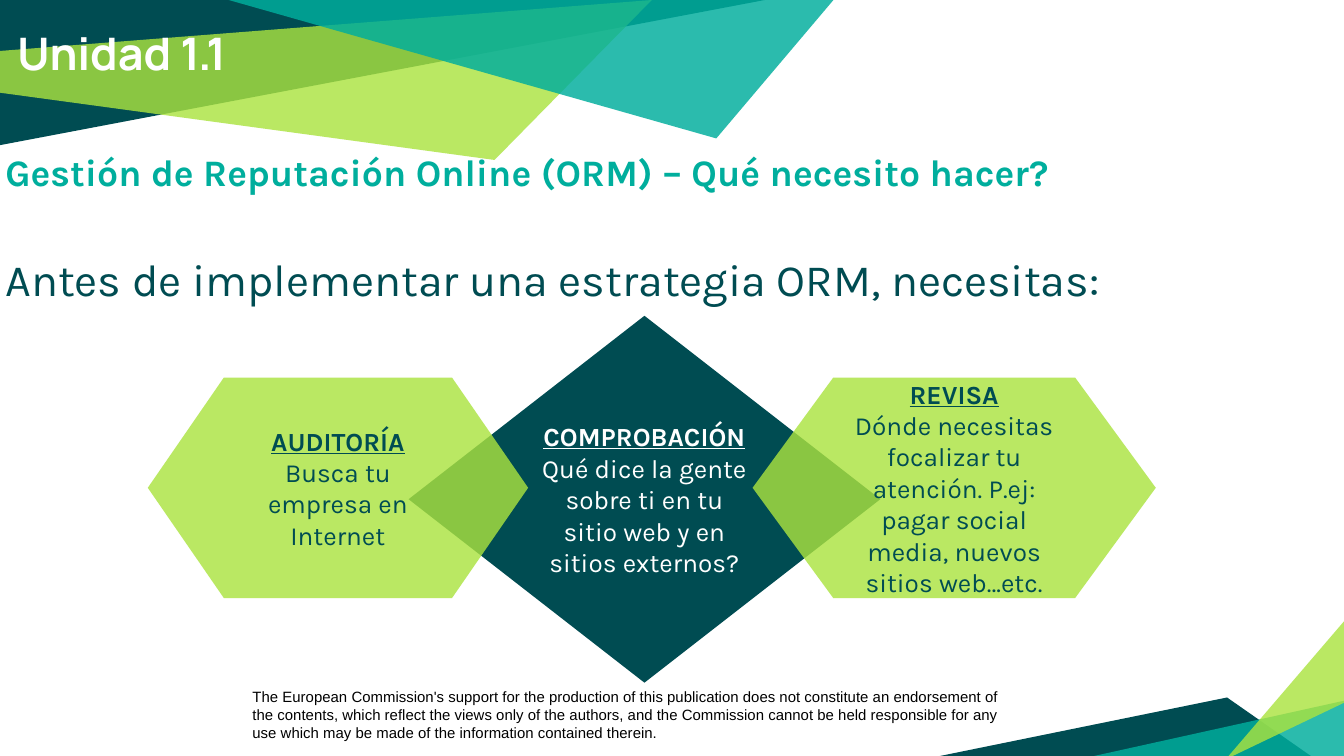
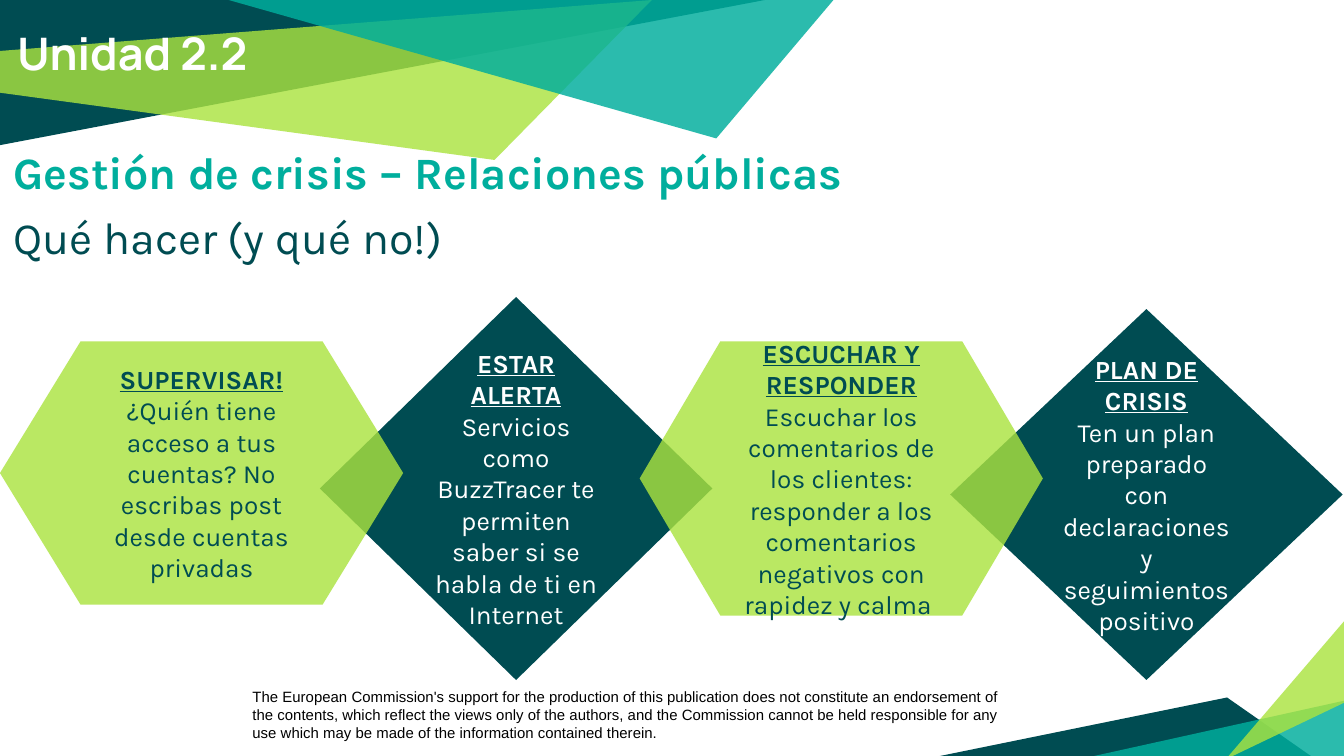
from lxml import etree
from pptx import Presentation
from pptx.dml.color import RGBColor
from pptx.enum.shapes import MSO_SHAPE
from pptx.enum.text import MSO_ANCHOR, MSO_AUTO_SIZE, PP_ALIGN
from pptx.oxml.ns import qn
from pptx.util import Pt

DIAMOND, HEXAGON = MSO_SHAPE.DIAMOND, MSO_SHAPE.FLOWCHART_PREPARATION
TOP, MIDDLE = MSO_ANCHOR.TOP, MSO_ANCHOR.MIDDLE
LEFT, CENTER = PP_ALIGN.LEFT, PP_ALIGN.CENTER
NO_FIT = MSO_AUTO_SIZE.NONE

PX = 9144
WIDTH = 1000
INSET = 10
FIRST_BAND_ID = 100
DARK, LIME, TEAL, WHITE, BLACK = "004C52", "ABE33F", "00AE9D", "FFFFFF", "000000"
OPACITY = {DARK: 100, LIME: 81, TEAL: 83}
STEP_STYLE = {DIAMOND: (DARK, WHITE), HEXAGON: (LIME, DARK)}

BANDS = [
    (DARK, [(0, 0), (0, 108), (569, 0)]),
    (LIME, [(-1, 38), (0, 69), (368, 119), (485, 0)]),
    (DARK, [(697, 563), (976, 563), (913, 519)]),
    (TEAL, [(1002, 521), (1002, 565), (803, 565)]),
    (LIME, [(1002, 522), (1002, 460), (912, 565)]),
    (TEAL, [(170, 0), (533, 103), (621, -1), (609, 0)]),
]
DISCLAIMER = (
    "The European Commission's support for the production of this publication does not "
    "constitute an endorsement of the contents, which reflect the views only of the authors, "
    "and the Commission cannot be held responsible for any use which may be made of the "
    "information contained therein."
)

SLIDES = [
    dict(
        unit="Unidad 1.1",
        body_box=(-6, 101, 1000, 302),
        body_inset=INSET,
        lines=[
            ("Gestión de Reputación Online (ORM) – Qué necesito hacer?", 20, TEAL, True, 0),
            ("Antes de implementar una estrategia ORM, necesitas:", 24, DARK, False, 31),
        ],
        steps=[
            (DIAMOND, (304, 235, 351, 273), "COMPROBACIÓN",
             "Qué dice la gente sobre ti en tu sitio web y en sitios externos?"),
            (HEXAGON, (110, 281, 283, 164), "AUDITORÍA", "Busca tu empresa en Internet"),
            (HEXAGON, (560, 281, 300, 164), "REVISA",
             "Dónde necesitas focalizar tu atención. P.ej: pagar social media, "
             "nuevos sitios web…etc."),
        ],
    ),
    dict(
        unit="Unidad 2.2",
        body_box=(0, 50, 1000, 302),
        body_inset=58,
        lines=[
            ("Gestión de crisis – Relaciones públicas", 24, TEAL, True, 0),
            ("Qué hacer (y qué no!)", 24, DARK, False, 6),
        ],
        steps=[
            (DIAMOND, (707, 230, 292, 276), "PLAN DE CRISIS",
             "Ten un plan preparado con declaraciones y seguimientos positivo"),
            (DIAMOND, (238, 221, 292, 285), "ESTAR ALERTA",
             "Servicios como BuzzTracer te permiten saber si se habla de ti en Internet"),
            (HEXAGON, (0, 254, 300, 196), "SUPERVISAR!",
             "¿Quién tiene acceso a tus cuentas? No escribas post desde cuentas privadas"),
            (HEXAGON, (476, 254, 300, 204), "ESCUCHAR Y RESPONDER",
             "Escuchar los comentarios de los clientes: responder a los comentarios "
             "negativos con rapidez y calma "),
        ],
    ),
]


def rgb(color):
    """Turn a hex string into a colour."""
    return RGBColor.from_string(color)


def emu(box):
    """Turn px lengths into EMU."""
    return [v * PX for v in box]


def paint(sp, color):
    """Fill a shape flat, with the opacity its colour has in this theme."""
    sp.shadow.inherit = False
    sp.line.fill.background()
    sp.fill.solid()
    sp.fill.fore_color.rgb = rgb(color)
    if OPACITY[color] < 100:
        clr = sp._element.spPr.find(qn("a:solidFill"))[0]
        etree.SubElement(clr, qn("a:alpha"), val=str(OPACITY[color] * 1000))


def write(p, text, size, font, color, bold=False, underline=False, align=LEFT):
    """Set a paragraph's text and format its runs."""
    p.text = text
    p.alignment = align
    for r in p.runs:
        f = r.font
        f.size, f.name, f.bold, f.underline = Pt(size), font, bold, underline
        f.color.rgb = rgb(color)


def set_frame(tf, anchor, top=INSET):
    """Set insets, wrapping and anchor of a text frame."""
    tf.word_wrap = True
    tf.auto_size = NO_FIT
    tf.vertical_anchor = anchor
    tf.margin_left = tf.margin_right = tf.margin_bottom = INSET * PX
    tf.margin_top = top * PX


def place(sp, box):
    """Move a placeholder to a box."""
    sp.left, sp.top, sp.width, sp.height = emu(box)


def add_backdrop(s):
    """Draw the disclaimer and the angular bands, and hand them to the layout."""
    tb = s.shapes.add_textbox(*emu((178, 507, 579, 50)))
    tb.text_frame.word_wrap = True
    write(tb.text_frame.paragraphs[0], DISCLAIMER, 8, "Arial", BLACK)
    parts = [tb]
    for color, points in BANDS:
        fb = s.shapes.build_freeform(*points[0], scale=PX)
        fb.add_line_segments(points[1:], close=True)
        sp = fb.convert_to_shape()
        paint(sp, color)
        parts.append(sp)
    for i, sp in enumerate(parts, FIRST_BAND_ID):
        sp._element.nvSpPr.cNvPr.set("id", str(i))
        s.slide_layout.shapes._spTree.append(sp._element)


def add_title(s, text):
    """Write the unit name over the top bands."""
    place(s.shapes.title, (3, 9, 806, 60))
    tf = s.shapes.title.text_frame
    set_frame(tf, TOP)
    write(tf.paragraphs[0], text, 24, "Manrope", WHITE, bold=True)


def add_body(s, box, inset, lines):
    """Write the heading lines in the body placeholder."""
    sp = s.placeholders[1]
    place(sp, box)
    tf = sp.text_frame
    set_frame(tf, TOP, inset)
    for i, (text, size, color, bold, before) in enumerate(lines):
        p = tf.add_paragraph() if i else tf.paragraphs[0]
        pPr = p._p.get_or_add_pPr()
        pPr.set("marL", "0")
        pPr.set("indent", "0")
        etree.SubElement(pPr, qn("a:buNone"))
        p.space_before = Pt(before)
        write(p, text, size, "Karla", color, bold)


def add_step(s, kind, box, heading, detail):
    """Draw one step of the chain with its heading and detail."""
    fill, ink = STEP_STYLE[kind]
    sp = s.shapes.add_shape(kind, *emu(box))
    paint(sp, fill)
    tf = sp.text_frame
    set_frame(tf, MIDDLE)
    write(tf.paragraphs[0], heading, 14, "Karla", ink, True, True, CENTER)
    write(tf.add_paragraph(), detail, 14, "Karla", ink, align=CENTER)


def add_unit_slide(s, unit, body_box, body_inset, lines, steps):
    """Fill one unit slide."""
    add_title(s, unit)
    add_body(s, body_box, body_inset, lines)
    for step in steps:
        add_step(s, *step)


def main():
    """Build the deck and save it."""
    prs = Presentation()
    prs.slide_width = WIDTH * PX
    prs.slide_height = prs.slide_width * 9 // 16
    layout = prs.slide_layouts[1]
    slides = [prs.slides.add_slide(layout) for _ in SLIDES]
    add_backdrop(slides[0])
    for s, content in zip(slides, SLIDES):
        add_unit_slide(s, **content)
    prs.save("out.pptx")


if __name__ == "__main__":
    main()
